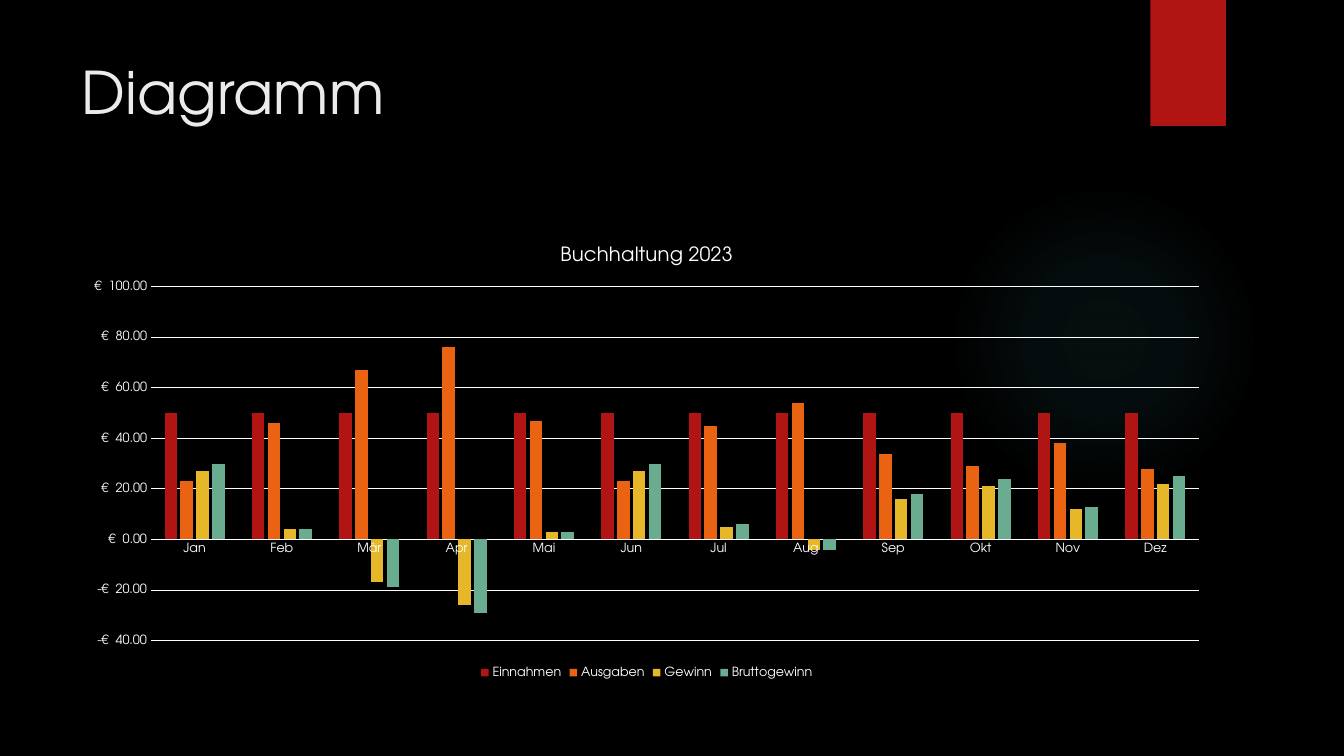
from lxml import etree
from pptx import Presentation
from pptx.chart.data import CategoryChartData
from pptx.dml.color import RGBColor
from pptx.enum import chart as ch, shapes, text
from pptx.oxml import parse_xml
from pptx.oxml.ns import nsdecls, qn
from pptx.util import Inches, Pt

FONT = "TeX Gyre Adventor"
BLACK = RGBColor(0x00, 0x00, 0x00)
WHITE = RGBColor(0xFF, 0xFF, 0xFF)
TITLE_GREY = RGBColor(0xEB, 0xEB, 0xEB)
RED = RGBColor(0xB0, 0x15, 0x13)
ORANGE = RGBColor(0xEA, 0x63, 0x12)
YELLOW = RGBColor(0xE6, 0xB7, 0x29)
GREEN = RGBColor(0x6A, 0xAC, 0x90)
GLOW = RGBColor(0x50, 0xB9, 0xC1)

MONTHS = ["Jan", "Feb", "Mär", "Apr", "Mai", "Jun",
          "Jul", "Aug", "Sep", "Okt", "Nov", "Dez"]
SERIES = [
    ("Einnahmen", RED, [50] * 12),
    ("Ausgaben", ORANGE, [23, 46, 67, 76, 47, 23, 45, 54, 34, 29, 38, 28]),
    ("Gewinn", YELLOW, [27, 4, -17, -26, 3, 27, 5, -4, 16, 21, 12, 22]),
    ("Bruttogewinn", GREEN, [30, 4, -19, -29, 3, 30, 6, -4, 18, 24, 13, 25]),
]


def set_font(font, size, color=WHITE):
    font.name = FONT
    font.size = Pt(size)
    font.bold = False
    font.color.rgb = color


def add_plain_shape(slide, kind, left, top, width, height):
    sp = slide.shapes.add_shape(kind, Inches(left), Inches(top),
                                Inches(width), Inches(height))
    sp.shadow.inherit = False
    sp.line.fill.background()
    return sp


def add_glow(slide):
    """Add a circle that fades out from its centre."""
    sp = add_plain_shape(slide, shapes.MSO_SHAPE.OVAL, 9.41, 1.83, 3.08, 3.08)
    sp.fill.background()
    grad = parse_xml(f'<a:gradFill {nsdecls("a")}><a:gsLst/><a:path path="circle">'
                     '<a:fillToRect l="50000" t="50000" r="50000" b="50000"/>'
                     '</a:path></a:gradFill>')
    for position, opacity in [(0, 7), (36, 6), (69, 0), (100, 0)]:
        stop = etree.SubElement(grad[0], qn("a:gs"), pos=str(position * 1000))
        color = etree.SubElement(stop, qn("a:srgbClr"), val=str(GLOW))
        etree.SubElement(color, qn("a:alpha"), val=str(opacity * 1000))
    no_fill = sp.element.spPr.find(qn("a:noFill"))
    sp.element.spPr.replace(no_fill, grad)


def add_ribbon(slide):
    sp = add_plain_shape(slide, shapes.MSO_SHAPE.RECTANGLE, 11.41, 0, 0.75, 1.25)
    sp.fill.solid()
    sp.fill.fore_color.rgb = RED


def set_title(slide, wording):
    title = slide.shapes.title
    title.left, title.top = Inches(0.71), Inches(0.5)
    title.width, title.height = Inches(10.29), Inches(1.53)
    tf = title.text_frame
    tf.text = wording
    tf.vertical_anchor = text.MSO_ANCHOR.TOP
    p = tf.paragraphs[0]
    p.alignment = text.PP_ALIGN.LEFT
    set_font(p.font, 42, TITLE_GREY)


def format_axes(chart):
    months, amounts = chart.category_axis, chart.value_axis
    for axis in (months, amounts):
        axis.major_tick_mark = axis.minor_tick_mark = ch.XL_TICK_MARK.NONE
        set_font(axis.tick_labels.font, 9)
    amounts.minimum_scale, amounts.maximum_scale = -40, 100
    amounts.major_unit = 20
    amounts.tick_labels.number_format = '"€"\\ #\\ ##0.00'
    amounts.tick_labels.number_format_is_linked = False
    amounts.format.line.fill.background()
    for line in (months.format.line, amounts.major_gridlines.format.line):
        line.color.rgb = WHITE
        line.width = Pt(0.75)


def add_accounts_chart(slide):
    data = CategoryChartData()
    data.categories = MONTHS
    for name, _, values in SERIES:
        data.add_series(name, values)
    chart = slide.shapes.add_chart(
        ch.XL_CHART_TYPE.COLUMN_CLUSTERED, Inches(0.71), Inches(2.25),
        Inches(11.41), Inches(4.52), data).chart
    set_font(chart.font, 10)

    chart.has_title = True
    tf = chart.chart_title.text_frame
    tf.text = "Buchhaltung 2023"
    set_font(tf.paragraphs[0].font, 14)
    chart.chart_title.include_in_layout = False

    chart.has_legend = True
    chart.legend.position = ch.XL_LEGEND_POSITION.BOTTOM
    chart.legend.include_in_layout = False
    set_font(chart.legend.font, 9)

    plot = chart.plots[0]
    plot.vary_by_categories = False
    plot.gap_width, plot.overlap = 219, -27
    for series, (_, color, _) in zip(plot.series, SERIES):
        series.invert_if_negative = False
        series.format.fill.solid()
        series.format.fill.fore_color.rgb = color
    format_axes(chart)


def main():
    prs = Presentation()
    prs.slide_width, prs.slide_height = Inches(13.33), Inches(7.5)
    slide = prs.slides.add_slide(prs.slide_layouts[5])
    slide.background.fill.solid()
    slide.background.fill.fore_color.rgb = BLACK
    add_glow(slide)
    add_ribbon(slide)
    set_title(slide, "Diagramm")
    add_accounts_chart(slide)
    prs.save("out.pptx")


if __name__ == "__main__":
    main()
